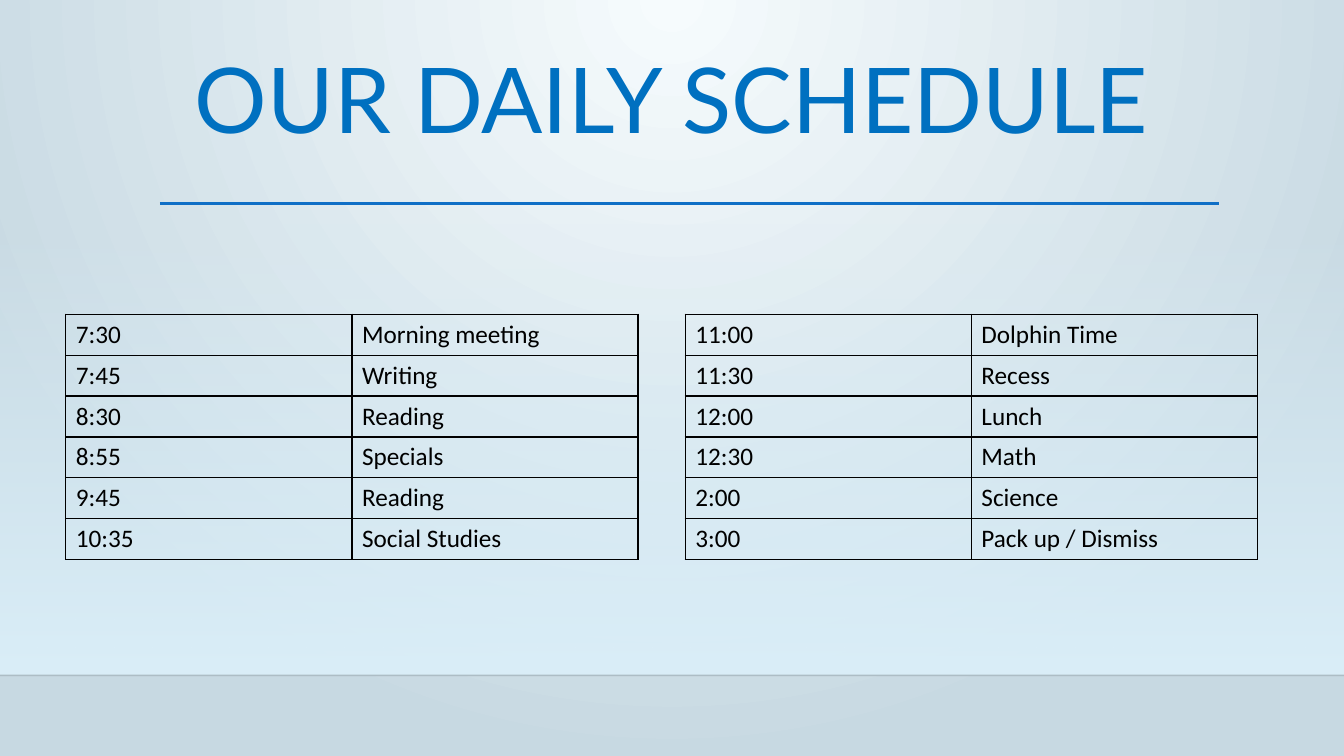
from dataclasses import dataclass

from lxml import etree
from pptx import Presentation
from pptx import util as u
from pptx.dml.color import RGBColor
from pptx.enum import shapes, text
from pptx.oxml import ns


@dataclass(frozen=True)
class Theme:
    title_font: str = "Lato"
    body_font: str = "Calibri"
    title_size: float = 64.8
    body_size: float = 18
    title: str = "0070C0"
    ink: str = "000000"
    rule: str = "0F6FC6"
    horizon: str = "000001"
    glow: str = "F6FBFD"
    sky: str = "C7D9E2"
    haze: str = "DBEFF9"


@dataclass(frozen=True)
class Rule:
    left: float
    right: float
    top: float
    color: str
    weight: float
    opacity: int = 100


@dataclass(frozen=True)
class Schedule:
    left: float
    entries: tuple[tuple[str, str], ...]


THEME = Theme()
WIDTH, HEIGHT = 33.87, 19.05
HAZE_TOP, HORIZON = 5.61, 17.02
TABLE_TOP, COLUMN_WIDTH, ROW_HEIGHT = 7.92, 7.21, 1.03

RULES = (
    Rule(0, WIDTH, HORIZON, THEME.horizon, 1, 20),
    Rule(4.03, 30.73, 5.13, THEME.rule, 2.5),
)
SCHEDULES = (
    Schedule(1.66, (
        ("7:30", "Morning meeting"),
        ("7:45", "Writing"),
        ("8:30", "Reading"),
        ("8:55", "Specials"),
        ("9:45", "Reading"),
        ("10:35", "Social Studies"),
    )),
    Schedule(17.27, (
        ("11:00", "Dolphin Time"),
        ("11:30", "Recess"),
        ("12:00", "Lunch"),
        ("12:30", "Math"),
        ("2:00", "Science"),
        ("3:00", "Pack up / Dismiss"),
    )),
)


def set_opacity(color_element, percent: int) -> None:
    etree.SubElement(color_element, ns.qn("a:alpha"), val=str(percent * 1000))


def set_gradient(fill, *colors: str) -> None:
    fill.gradient()
    for stop, color in zip(fill.gradient_stops, colors):
        stop.color.rgb = RGBColor.from_string(color)


def style_font(font, name: str, size: float, color: str) -> None:
    font.name = name
    font.size = u.Pt(size)
    font.color.rgb = RGBColor.from_string(color)


def paint_background(page) -> None:
    set_gradient(page.background.fill, THEME.glow, THEME.sky)
    gradient = page.element.find(".//" + ns.qn("a:gradFill"))
    linear = gradient.find(ns.qn("a:lin"))
    circle = etree.Element(ns.qn("a:path"), path="circle")
    etree.SubElement(circle, ns.qn("a:fillToRect"), l="43000", r="43000", b="100000")
    gradient.replace(linear, circle)


def draw_haze(page) -> None:
    haze = page.shapes.add_shape(
        shapes.MSO_SHAPE.RECTANGLE,
        u.Cm(0), u.Cm(HAZE_TOP), u.Cm(WIDTH), u.Cm(HORIZON - HAZE_TOP))
    haze.shadow.inherit = False
    haze.line.fill.background()
    set_gradient(haze.fill, THEME.haze, THEME.haze)
    haze.fill.gradient_angle = 270
    set_opacity(haze.element.find(".//" + ns.qn("a:gs"))[0], 0)


def draw_rule(page, rule: Rule) -> None:
    line = page.shapes.add_connector(
        shapes.MSO_CONNECTOR.STRAIGHT,
        u.Cm(rule.left), u.Cm(rule.top), u.Cm(rule.right), u.Cm(rule.top))
    line.line.width = u.Pt(rule.weight)
    line.line.color.rgb = RGBColor.from_string(rule.color)
    properties = line.element.spPr
    if rule.opacity < 100:
        set_opacity(properties.find(".//" + ns.qn("a:srgbClr")), rule.opacity)
    etree.SubElement(properties, ns.qn("a:effectLst"))


def write_title(page, wording: str) -> None:
    box = page.shapes.title
    box.left, box.top, box.width, box.height = map(u.Cm, (2.49, 1.27, 28.88, 3.2))
    frame = box.text_frame
    frame.text = wording
    frame.word_wrap = True
    frame.auto_size = text.MSO_AUTO_SIZE.NONE
    frame.vertical_anchor = text.MSO_ANCHOR.TOP
    para = frame.paragraphs[0]
    para.alignment = text.PP_ALIGN.CENTER
    para.line_spacing = 0.9
    style_font(para.runs[0].font, THEME.title_font, THEME.title_size, THEME.title)


def outline_cell(cell) -> None:
    properties = cell._tc.get_or_add_tcPr()
    for index, side in enumerate(("lnL", "lnR", "lnT", "lnB")):
        border = etree.Element(ns.qn("a:" + side), w=str(u.Pt(1)))
        solid = etree.SubElement(border, ns.qn("a:solidFill"))
        etree.SubElement(solid, ns.qn("a:srgbClr"), val=THEME.ink)
        properties.insert(index, border)


def draw_schedule(page, schedule: Schedule) -> None:
    count = len(schedule.entries)
    table = page.shapes.add_table(
        count, 2, u.Cm(schedule.left), u.Cm(TABLE_TOP),
        u.Cm(2 * COLUMN_WIDTH), u.Cm(count * ROW_HEIGHT)).table
    table.first_row = table.horz_banding = False
    for row, entry in zip(table.rows, schedule.entries):
        for cell, wording in zip(row.cells, entry):
            cell.text_frame.text = wording
            span = cell.text_frame.paragraphs[0].runs[0]
            style_font(span.font, THEME.body_font, THEME.body_size, THEME.ink)
            cell.fill.background()
            outline_cell(cell)


def main() -> None:
    deck = Presentation()
    deck.slide_width, deck.slide_height = u.Cm(WIDTH), u.Cm(HEIGHT)
    page = deck.slides.add_slide(deck.slide_layouts.get_by_name("Title Only"))

    # Backdrop
    paint_background(page)
    draw_haze(page)
    for rule in RULES:
        draw_rule(page, rule)

    # Content
    write_title(page, "OUR DAILY SCHEDULE")
    for schedule in SCHEDULES:
        draw_schedule(page, schedule)

    deck.save("out.pptx")


if __name__ == "__main__":
    main()
